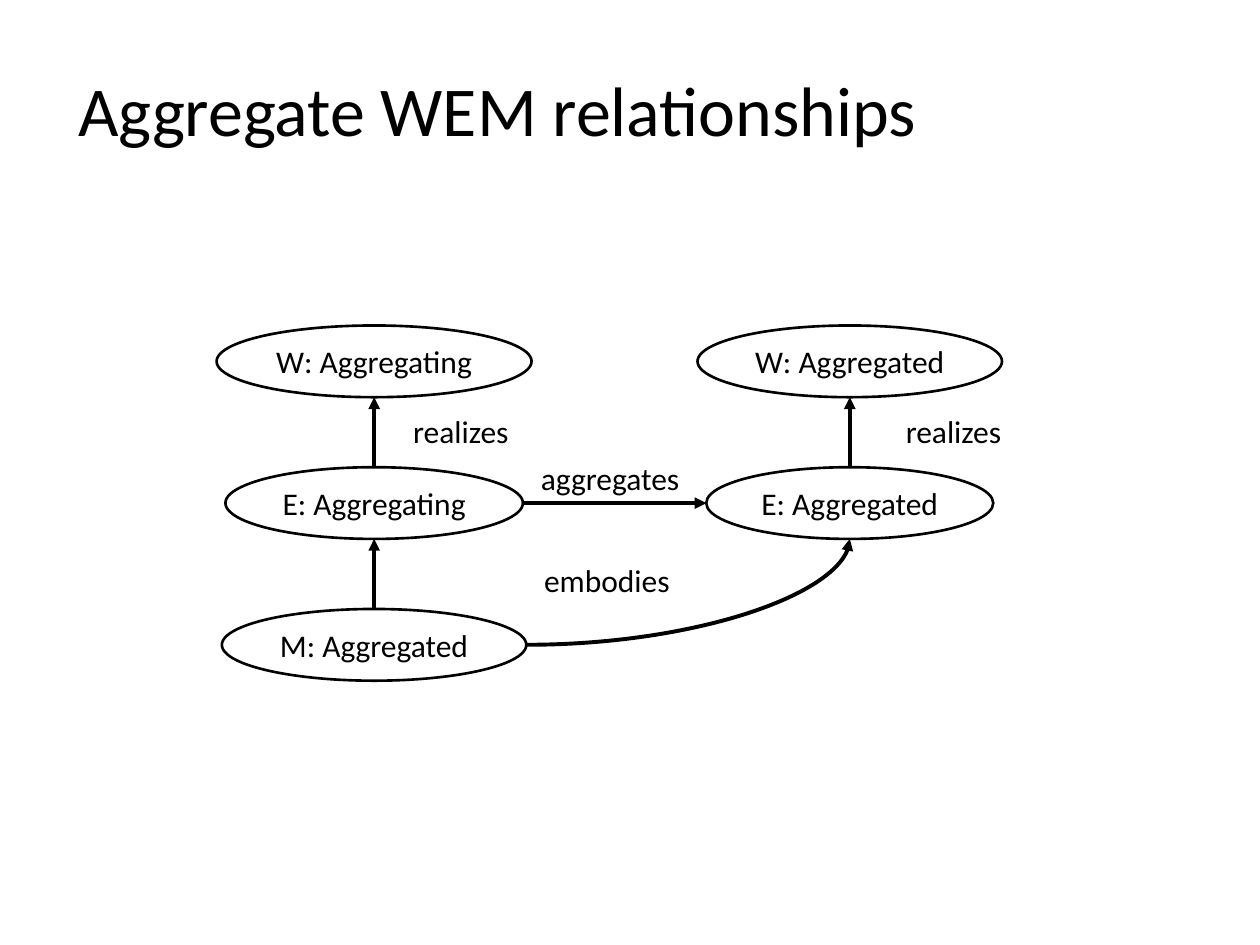
from lxml import etree
from pptx import Presentation
from pptx import util as u
from pptx.dml.color import RGBColor
from pptx.enum import shapes, text
from pptx.oxml import ns

BLACK = "000000"
OVAL_HEIGHT = 41
LEFT, RIGHT = 213.8, 485.6
WORK, EXPRESSION, MANIFESTATION = (186 + 81 * row for row in range(3))


def color(code):
    """Return the colour for a hex string."""
    return RGBColor.from_string(code)


def format_text(shape, words, size, align, anchor):
    """Fill a shape with one formatted line of text."""
    frame = shape.text_frame
    frame.text = words
    para = frame.paragraphs[0]
    span = para.runs[0]
    frame_format = {"word_wrap": False, "auto_size": text.MSO_AUTO_SIZE.NONE,
                    "vertical_anchor": anchor}
    font_format = {"name": "Calibri", "size": u.Pt(size)}
    for target, values in ((frame, frame_format), (para, {"alignment": align}),
                           (span.font, font_format)):
        for name, value in values.items():
            setattr(target, name, value)
    span.font.color.rgb = color(BLACK)


def add_title(page, words):
    """Place and format the title placeholder."""
    title = page.shapes.title
    place = {"left": 37.4, "top": 34.6, "width": 499, "height": 55.4}
    for name, value in place.items():
        setattr(title, name, u.Pt(value))
    format_text(title, words, 40, text.PP_ALIGN.LEFT, text.MSO_ANCHOR.TOP)


def add_oval(page, words, center, top, width):
    """Draw an outlined entity and return its four side points."""
    oval = page.shapes.add_shape(
        shapes.MSO_SHAPE.OVAL, u.Pt(center - width / 2), u.Pt(top),
        u.Pt(width), u.Pt(OVAL_HEIGHT))
    oval.shadow.inherit = False
    oval.fill.background()
    oval.line.color.rgb = color(BLACK)
    oval.line.width = u.Pt(1.5)
    format_text(oval, words, 18, text.PP_ALIGN.CENTER, text.MSO_ANCHOR.MIDDLE)
    middle = top + OVAL_HEIGHT / 2
    return {"top": (center, top), "bottom": (center, top + OVAL_HEIGHT),
            "left": (center - width / 2, middle),
            "right": (center + width / 2, middle)}


def add_label(page, words, left, top, width):
    """Add a relationship name."""
    box = page.shapes.add_textbox(u.Pt(left), u.Pt(top), u.Pt(width), u.Pt(29))
    format_text(box, words, 18, text.PP_ALIGN.LEFT, text.MSO_ANCHOR.TOP)


def add_arrow(page, start, end, curved=False):
    """Draw an arrow between two points, straight or as a quarter curve."""
    kind = shapes.MSO_CONNECTOR.CURVE if curved else shapes.MSO_CONNECTOR.STRAIGHT
    arrow = page.shapes.add_connector(kind, *map(u.Pt, start + end))
    arrow.line.color.rgb = color(BLACK)
    arrow.line.width = u.Pt(2.25)
    properties = arrow.element.spPr
    if curved:
        properties.find(ns.qn("a:prstGeom")).set("prst", "curvedConnector2")
    outline = properties.find(ns.qn("a:ln"))
    etree.SubElement(outline, ns.qn("a:tailEnd"), type="triangle")
    etree.SubElement(properties, ns.qn("a:effectLst"))


def main():
    """Build the deck."""
    deck = Presentation()
    deck.slide_width, deck.slide_height = u.Pt(720), u.Pt(540)
    page = deck.slides.add_slide(deck.slide_layouts[5])
    add_title(page, "Aggregate WEM relationships")

    work = add_oval(page, "W: Aggregating", LEFT, WORK, 180)
    expression = add_oval(page, "E: Aggregating", LEFT, EXPRESSION, 170)
    manifestation = add_oval(page, "M: Aggregated", LEFT, MANIFESTATION, 174)
    part_work = add_oval(page, "W: Aggregated", RIGHT, WORK, 174)
    part_expression = add_oval(page, "E: Aggregated", RIGHT, EXPRESSION, 164)

    add_arrow(page, expression["top"], work["bottom"])
    add_arrow(page, manifestation["top"], expression["bottom"])
    add_arrow(page, part_expression["top"], part_work["bottom"])
    add_arrow(page, expression["right"], part_expression["left"])
    add_arrow(page, manifestation["right"], part_expression["bottom"], curved=True)

    for words, left, top, width in (
            ("realizes", 229, 232, 70), ("realizes", 510.5, 232, 70),
            ("aggregates", 302, 258.8, 94), ("embodies", 303.8, 317, 87)):
        add_label(page, words, left, top, width)
    deck.save("out.pptx")


if __name__ == "__main__":
    main()
